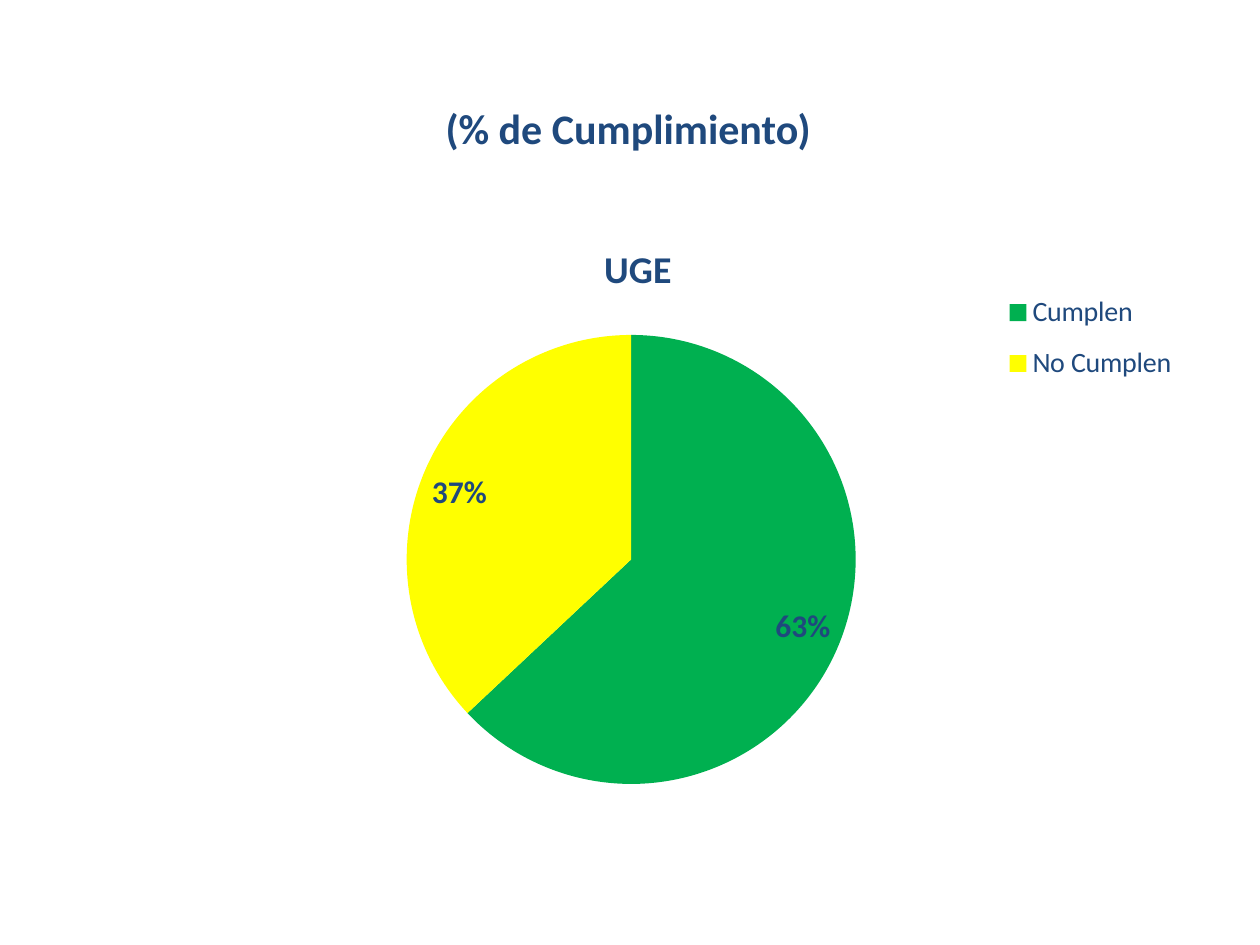
from lxml.etree import SubElement
from pptx import Presentation
from pptx.chart.data import CategoryChartData
from pptx.dml.color import RGBColor
from pptx.enum.chart import XL_CHART_TYPE as ChartType
from pptx.enum.chart import XL_LABEL_POSITION as LabelPosition
from pptx.enum.chart import XL_LEGEND_POSITION as LegendPosition
from pptx.enum.text import MSO_ANCHOR, PP_ALIGN
from pptx.oxml.ns import qn
from pptx.util import Pt


def color(value):
    return RGBColor.from_string(value)


def place(element, index, **fractions):
    for layout in element.findall(qn("c:layout")):
        element.remove(layout)
    layout = SubElement(element, qn("c:layout"))
    element.insert(index, layout)
    manual = SubElement(layout, qn("c:manualLayout"))
    if "w" in fractions and index == 0:
        SubElement(manual, qn("c:layoutTarget")).set("val", "inner")
    for axis in "xy":
        SubElement(manual, qn(f"c:{axis}Mode")).set("val", "edge")
    for name, fraction in fractions.items():
        SubElement(manual, qn(f"c:{name}")).set("val", str(fraction))


class SlideBuilder:
    font_name = "Calibri"
    ink = "1F497D"

    def __init__(self, slide):
        self.slide = slide

    def style(self, font, size, bold=False):
        font.name = self.font_name
        font.size = Pt(size)
        font.bold = bold
        font.color.rgb = color(self.ink)

    def subtitle(self, text, left, top, width, height):
        title = self.slide.shapes.title
        title._element.getparent().remove(title._element)
        shape = self.slide.placeholders[1]
        shape.left, shape.top = Pt(left), Pt(top)
        shape.width, shape.height = Pt(width), Pt(height)
        frame = shape.text_frame
        frame.vertical_anchor = MSO_ANCHOR.TOP
        paragraph = frame.paragraphs[0]
        paragraph.alignment = PP_ALIGN.CENTER
        paragraph.space_before = Pt(0)
        run = paragraph.add_run()
        run.text = text
        self.style(run.font, 24, bold=True)

    def pie(self, name, slices, left, top, width, height):
        data = CategoryChartData()
        data.categories = [label for label, _, _ in slices]
        data.add_series(name, [value for _, value, _ in slices])
        chart = self.slide.shapes.add_chart(
            ChartType.PIE, Pt(left), Pt(top), Pt(width), Pt(height), data
        ).chart
        self.style(chart.font, 18)

        chart.has_title = True
        run = chart.chart_title.text_frame.paragraphs[0].add_run()
        run.text = name
        self.style(run.font, 21.6, bold=True)
        place(chart.chart_title._element, 1, x=0.47, y=0.05)

        chart.has_legend = True
        legend = chart.legend
        legend.position = LegendPosition.CORNER
        legend.include_in_layout = False
        self.style(legend.font, 16)
        place(legend._element, 1, x=0.82, y=0.12, w=0.17, h=0.19)

        plot = chart.plots[0]
        plot.vary_by_categories = True
        place(plot._element.getparent(), 0, x=0.04, y=0.21, w=0.92, h=0.72)
        plot.has_data_labels = True
        labels = plot.data_labels
        labels.show_value = False
        labels.show_percentage = True
        labels.number_format = "0%"
        labels.number_format_is_linked = False
        labels.position = LabelPosition.INSIDE_END
        self.style(labels.font, 18, bold=True)
        for index, (_, _, fill) in enumerate(slices):
            point = plot.series[0].points[index]
            point.format.fill.solid()
            point.format.fill.fore_color.rgb = color(fill)


def main():
    presentation = Presentation()
    presentation.slide_width, presentation.slide_height = Pt(720), Pt(540)
    slide = presentation.slides.add_slide(presentation.slide_layouts[0])
    builder = SlideBuilder(slide)
    builder.subtitle("(% de Cumplimiento)", 42.5, 54.7, 633, 51)
    slices = [("Cumplen", 63, "00B050"), ("No Cumplen", 37, "FFFF00")]
    builder.pie("UGE", slices, 36.7, 116.6, 648, 356.4)
    presentation.save("out.pptx")


if __name__ == "__main__":
    main()
